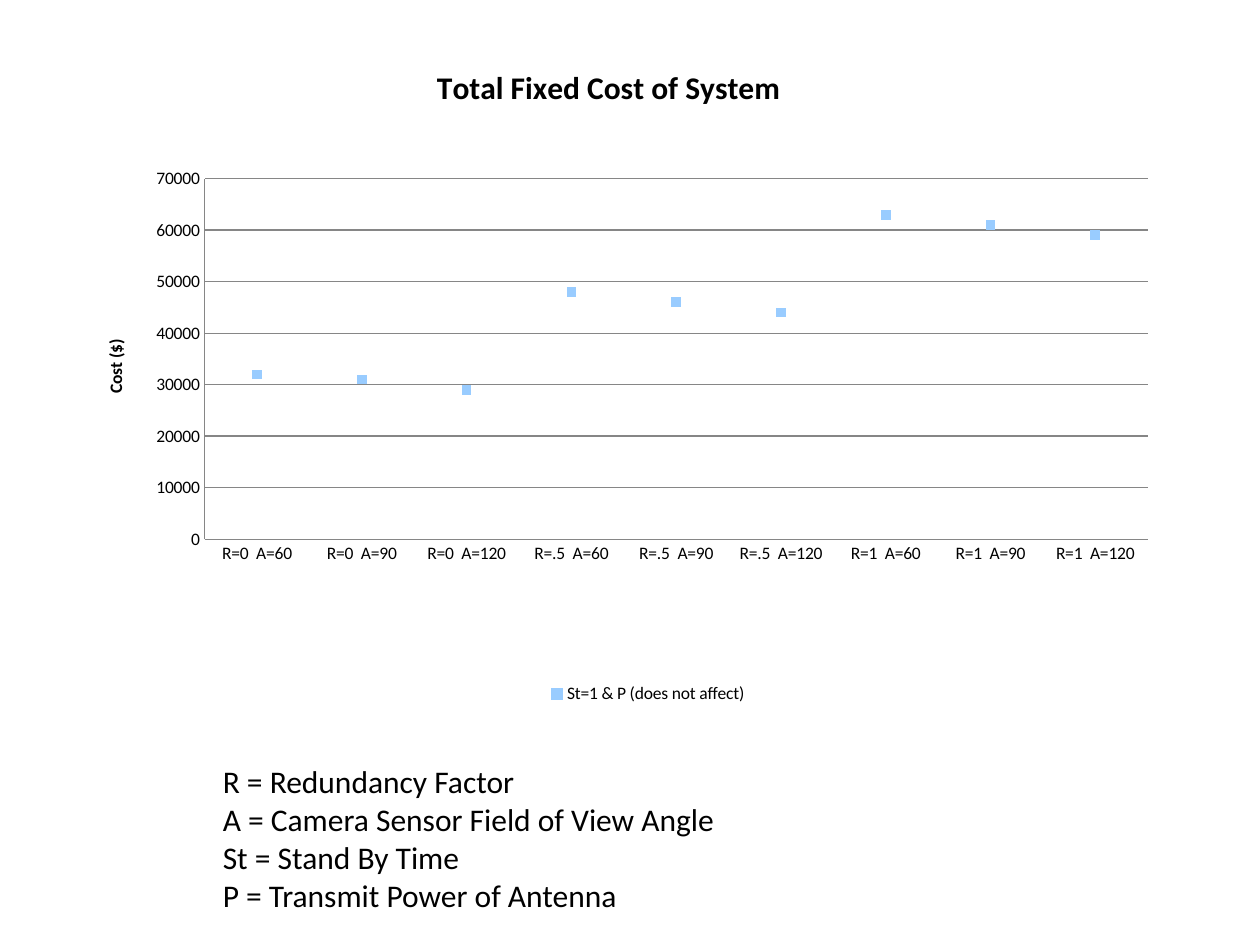
from lxml import etree
from pptx import Presentation
from pptx.chart.data import CategoryChartData
from pptx.dml.color import RGBColor
from pptx.enum.chart import XL_CHART_TYPE, XL_LEGEND_POSITION, XL_MARKER_STYLE, XL_TICK_MARK
from pptx.enum.text import MSO_AUTO_SIZE
from pptx.oxml.ns import qn
from pptx.util import Inches, Pt

LINE_MARKERS = XL_CHART_TYPE.LINE_MARKERS
LEGEND_RIGHT = XL_LEGEND_POSITION.RIGHT
SQUARE = XL_MARKER_STYLE.SQUARE
NO_TICK = XL_TICK_MARK.NONE
GROW = MSO_AUTO_SIZE.SHAPE_TO_FIT_TEXT

COLORS = {"text": "000000", "marker": "99CCFF", "rule": "868686"}
FONT = "Calibri"


def add_text(tf, text, size=18, bold=False, color="text"):
    """Write text into the first paragraph, one line break per newline."""
    p = tf.paragraphs[0]
    for i, line in enumerate(text.split("\n")):
        if i:
            p.add_line_break()
        r = p.add_run()
        r.text = line
        r.font.name, r.font.size, r.font.bold = FONT, Pt(size), bold
        r.font.color.rgb = RGBColor.from_string(COLORS[color])


def place(parent, index, **shares):
    """Fix a chart part at shares of the chart's size."""
    for old in parent.findall(qn("c:layout")):
        parent.remove(old)
    layout = etree.Element(qn("c:layout"))
    manual = etree.SubElement(layout, qn("c:manualLayout"))
    if "w" in shares:
        etree.SubElement(manual, qn("c:layoutTarget")).set("val", "inner")
    for key in ("x", "y"):
        etree.SubElement(manual, qn(f"c:{key}Mode")).set("val", "edge")
    for key, share in shares.items():
        etree.SubElement(manual, qn(f"c:{key}")).set("val", str(share))
    parent.insert(index, layout)


prs = Presentation()
prs.slide_width, prs.slide_height = Inches(10), Inches(7.5)
s = prs.slides.add_slide(prs.slide_layouts[6])

# Cost for each redundancy factor and view angle
data = CategoryChartData()
data.categories = [f"R={r}  A={a}" for r in ("0", ".5", "1") for a in (60, 90, 120)]
data.add_series("St=1 & P (does not affect)",
                (32000, 31000, 29000, 48000, 46000, 44000, 63000, 61000, 59000))
chart = s.shapes.add_chart(LINE_MARKERS, 0, Inches(0.33), Inches(9.67),
                           Inches(5.58), data).chart
chart.font.name, chart.font.size = FONT, Pt(10)
chart.font.color.rgb = RGBColor.from_string(COLORS["text"])
plot_area = chart.plots[0]._element.getparent()
place(plot_area, 0, x=0.168, y=0.195, w=0.774, h=0.513)

# Chart title
chart.has_title = True
add_text(chart.chart_title.text_frame, "Total Fixed Cost of System", bold=True)
place(chart.chart_title._element, 1, x=0.354, y=0.026)

# Axes
cat_axis, val_axis = chart.category_axis, chart.value_axis
val_axis.minimum_scale, val_axis.maximum_scale, val_axis.major_unit = 0, 70000, 10000
val_axis.has_major_gridlines = True
add_text(val_axis.axis_title.text_frame, "Cost ($)", size=10, bold=True)
place(val_axis.axis_title._element, 1, x=0.083, y=0.419)
for axis in (cat_axis, val_axis):
    axis.major_tick_mark = axis.minor_tick_mark = NO_TICK
for line in (cat_axis.format.line, val_axis.format.line, val_axis.major_gridlines.format.line):
    line.color.rgb = RGBColor.from_string(COLORS["rule"])
    line.width = Pt(0.75)

# Markers without a joining line
series = chart.plots[0].series[0]
series.smooth = False
series.format.line.fill.background()
marker = series.marker
marker.style, marker.size = SQUARE, 5
marker.format.fill.solid()
marker.format.fill.fore_color.rgb = RGBColor.from_string(COLORS["marker"])
marker.format.line.fill.background()

# Legend below the plot
chart.has_legend = True
chart.legend.position = LEGEND_RIGHT
chart.legend.include_in_layout = False
place(chart.legend._element, 1, x=0.448, y=0.907)

# Key to the symbols
tf = s.shapes.add_textbox(Inches(1.67), Inches(6), Inches(5), Inches(1.31)).text_frame
tf.word_wrap = True
tf.auto_size = GROW
add_text(tf, "R = Redundancy Factor\nA = Camera Sensor Field of View Angle\n"
             "St = Stand By Time\nP = Transmit Power of Antenna")

prs.save("out.pptx")
